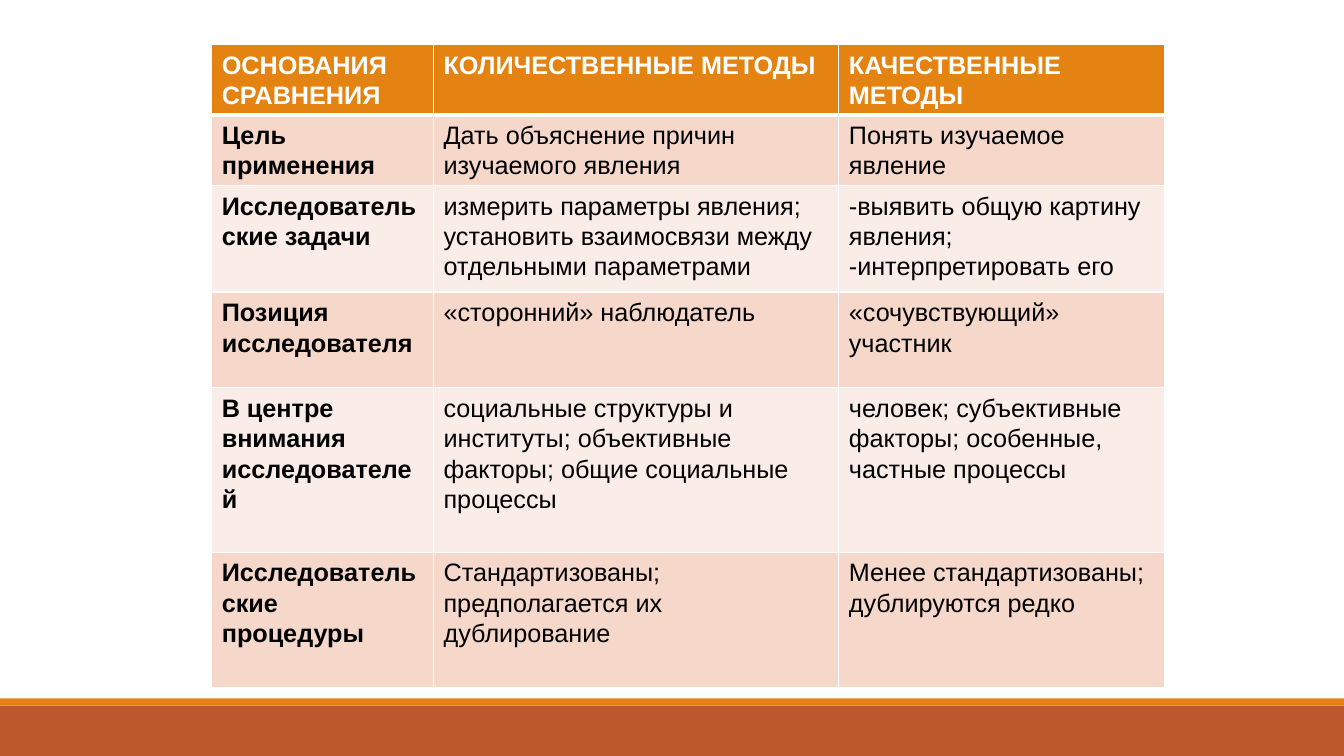
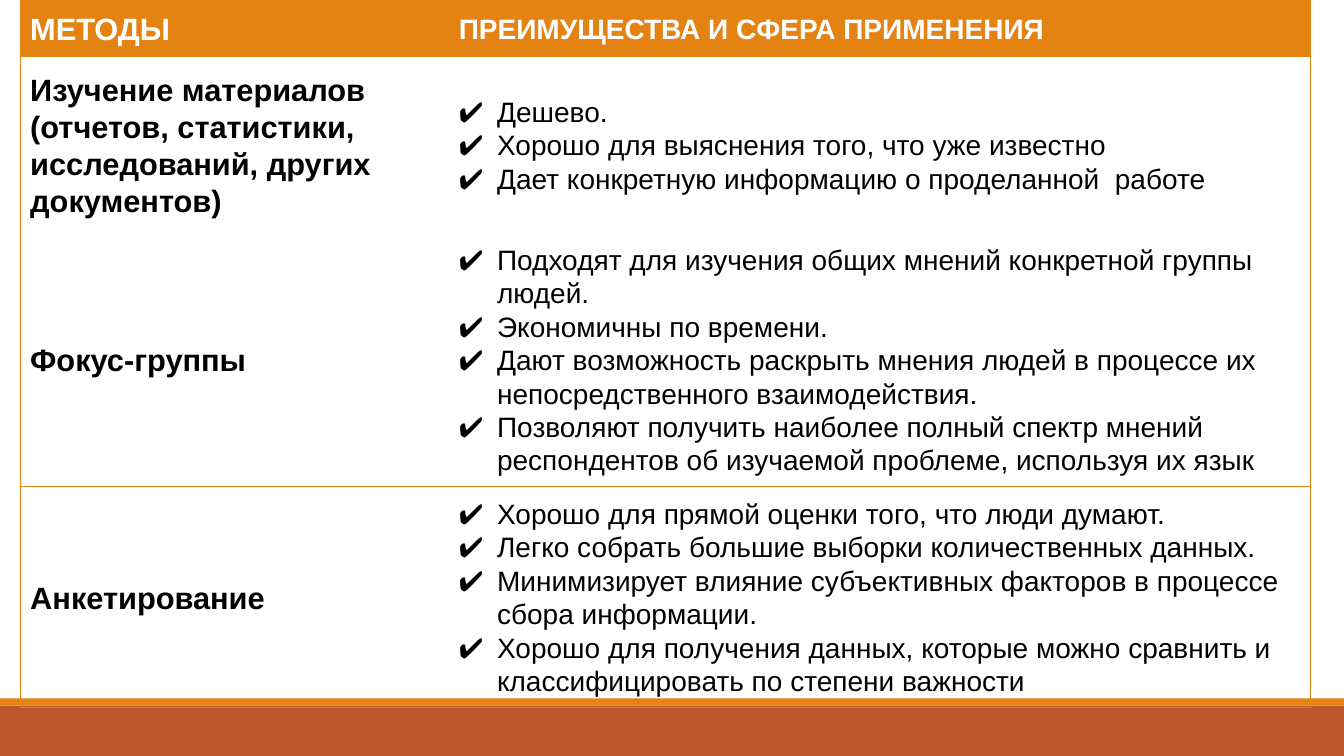
import dataclasses

import lxml.etree
import pptx
import pptx.dml.color
import pptx.enum.shapes
import pptx.enum.text
import pptx.oxml.ns
import pptx.util

Inches = pptx.util.Inches


@dataclasses.dataclass(frozen=True)
class Theme:
    """Hold the colours, font and sizes of the deck."""
    accent: str = "E48312"
    brick: str = "BD582C"
    white: str = "FFFFFF"
    black: str = "000000"
    tints: tuple = ("F5D8CA", "FAECE6")
    font: str = "Arial"
    small: float = 18
    mid: float = 20
    large: float = 22
    lead: float = 1.07
    thin: float = 0.75
    line: float = 1
    thick: float = 3


THEME = Theme()
WIDE, HIGH = 13.33, 7.5

COMPARE = [
    ("ОСНОВАНИЯ СРАВНЕНИЯ", "КОЛИЧЕСТВЕННЫЕ МЕТОДЫ", "КАЧЕСТВЕННЫЕ МЕТОДЫ"),
    ("Цель применения", "Дать объяснение причин изучаемого явления",
     "Понять изучаемое явление"),
    ("Исследовательские задачи",
     "измерить параметры явления;\n"
     "установить взаимосвязи между отдельными параметрами",
     "-выявить общую картину явления;\n-интерпретировать его"),
    ("Позиция исследователя", "«сторонний» наблюдатель",
     "«сочувствующий» участник"),
    ("В центре внимания исследователей",
     "социальные структуры и институты; объективные факторы; "
     "общие социальные процессы",
     "человек; субъективные факторы; особенные, частные процессы"),
    ("Исследовательские процедуры",
     "Стандартизованы; предполагается их дублирование",
     "Менее стандартизованы; дублируются редко"),
]

METHODS = [
    ("МЕТОДЫ", "ПРЕИМУЩЕСТВА И СФЕРА ПРИМЕНЕНИЯ"),
    ("Изучение материалов (отчетов, статистики, исследований, "
     "других документов)",
     "Дешево.\n"
     "Хорошо для выяснения того, что уже известно\n"
     "Дает конкретную информацию о проделанной  работе"),
    ("Фокус-группы",
     "Подходят для изучения общих мнений конкретной группы людей.\n"
     "Экономичны по времени.\n"
     "Дают возможность раскрыть мнения людей в процессе их "
     "непосредственного взаимодействия.\n"
     "Позволяют получить наиболее полный спектр мнений респондентов "
     "об изучаемой проблеме, используя их язык"),
    ("Анкетирование",
     "Хорошо для прямой оценки того, что люди думают.\n"
     "Легко собрать большие выборки количественных данных.\n"
     "Минимизирует влияние субъективных факторов в процессе "
     "сбора информации.\n"
     "Хорошо для получения данных, которые можно сравнить и "
     "классифицировать по степени важности"),
]


def shade(code):
    """Return the colour for a hex code."""
    return pptx.dml.color.RGBColor.from_string(code)


def node(home, tag, **attrs):
    """Append a DrawingML element and return it."""
    return lxml.etree.SubElement(home, pptx.oxml.ns.qn("a:" + tag), attrs)


def add_bar(slide, left, top, width, height, code):
    """Draw a plain filled bar."""
    bar = slide.shapes.add_shape(
        pptx.enum.shapes.MSO_SHAPE.RECTANGLE,
        Inches(left), Inches(top), Inches(width), Inches(height))
    bar.shadow.inherit = False
    bar.fill.solid()
    bar.fill.fore_color.rgb = shade(code)
    bar.line.fill.background()


def new_slide(deck):
    """Add a blank slide with the two bands at its foot."""
    slide = deck.slides.add_slide(deck.slide_layouts[6])
    add_bar(slide, 0, HIGH - 0.5, WIDE, 0.5, THEME.brick)
    add_bar(slide, 0, HIGH - 0.57, WIDE, 0.07, THEME.accent)
    return slide


def add_grid(slide, left, top, widths, heights):
    """Add a table with the given column widths and row heights."""
    grid = slide.shapes.add_table(
        len(heights), len(widths), Inches(left), Inches(top),
        Inches(sum(widths)), Inches(sum(heights))).table
    for column, width in zip(grid.columns, widths):
        column.width = Inches(width)
    for row, height in zip(grid.rows, heights):
        row.height = Inches(height)
    return grid


def set_edges(cell, edges):
    """Set each cell edge to a colour and width, or to none."""
    props = cell._tc.get_or_add_tcPr()
    for side in "LRTB":
        edge = edges.get(side)
        if edge:
            line = node(props, "ln" + side, w=str(pptx.util.Pt(edge[1])))
            node(node(line, "solidFill"), "srgbClr", val=edge[0])
        else:
            node(node(props, "ln" + side, w="0"), "noFill")


def set_fill(cell, code):
    """Fill a cell, or clear it when no colour is given."""
    if code:
        cell.fill.solid()
        cell.fill.fore_color.rgb = shade(code)
    else:
        cell.fill.background()


def set_text(cell, text, size, code, bold, pad, ticks=False):
    """Write and format the text of a cell."""
    cell.margin_left = cell.margin_right = Inches(0.1)
    cell.margin_top = cell.margin_bottom = Inches(pad)
    cell.text_frame.text = text
    for para in cell.text_frame.paragraphs:
        para.line_spacing = THEME.lead
        if ticks:
            add_tick(para)
        for run in para.runs:
            run.font.name = THEME.font
            run.font.size = pptx.util.Pt(size)
            run.font.bold = bold
            run.font.color.rgb = shade(code)


def add_tick(para):
    """Give a paragraph a hanging check mark."""
    props = para._p.get_or_add_pPr()
    props.set("marL", str(Inches(0.38)))
    props.set("indent", str(-Inches(0.38)))
    node(node(props, "buClr"), "srgbClr", val=THEME.black)
    node(props, "buFont", typeface=THEME.font)
    node(props, "buChar", char="✔")


def compare_grid(slide, left, top):
    """Place the table that compares two kinds of methods."""
    grid = add_grid(slide, left, top, (2.2, 4.02, 3.23),
                    (0.67, 0.67, 1.06, 0.95, 1.63, 1.34))
    for row, texts in enumerate(COMPARE):
        head = row == 0
        for col, text in enumerate(texts):
            cell = grid.cell(row, col)
            edges = dict.fromkeys("LRTB", (THEME.white, THEME.line))
            if row < 2:
                edges["T" if row else "B"] = (THEME.white, THEME.thick)
            set_edges(cell, edges)
            set_fill(cell, THEME.accent if head else THEME.tints[(row - 1) % 2])
            set_text(cell, text, THEME.small,
                     THEME.white if head else THEME.black,
                     head or col == 0, 0.05)


def method_grid(slide, left, top):
    """Place the table of methods and their merits."""
    grid = add_grid(slide, left, top, (4.25, 8.55), (0.57, 1.74, 2.46, 2.14))
    last = len(METHODS) - 1
    rule = (THEME.accent, THEME.thin)
    for row, texts in enumerate(METHODS):
        head = row == 0
        for col, text in enumerate(texts):
            cell = grid.cell(row, col)
            edges = {"R" if col else "L": rule}
            if row in (0, last):
                edges["T"] = rule
            if row >= last - 1:
                edges["B"] = rule
            set_edges(cell, edges)
            set_fill(cell, THEME.accent if head else None)
            set_text(cell, text, THEME.mid if col else THEME.large,
                     THEME.white if head else THEME.black,
                     head or col == 0, 0.1, ticks=col == 1 and not head)
            cell.vertical_anchor = pptx.enum.text.MSO_ANCHOR.MIDDLE


def main():
    """Build and save the deck."""
    deck = pptx.Presentation()
    deck.slide_width, deck.slide_height = Inches(WIDE), Inches(HIGH)
    compare_grid(new_slide(deck), 2.1, 0.44)
    method_grid(new_slide(deck), 0.2, 0)
    deck.save("out.pptx")


if __name__ == "__main__":
    main()
